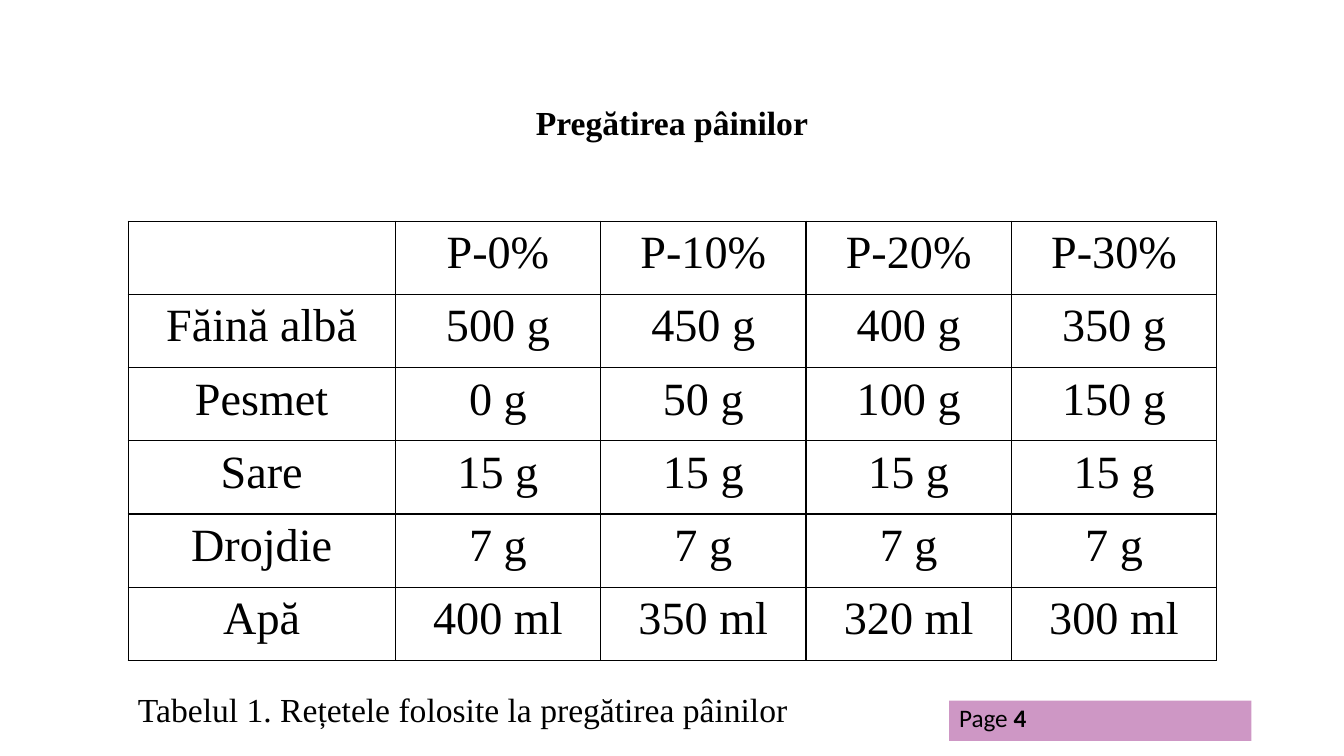
from pptx import Presentation
from pptx.dml.color import RGBColor
from pptx.enum.shapes import MSO_SHAPE
from pptx.enum.text import MSO_ANCHOR, MSO_AUTO_SIZE, PP_ALIGN
from pptx.oxml.ns import qn
from pptx.util import Pt
from lxml import etree

BLACK = RGBColor(0x00, 0x00, 0x00)
PURPLE = RGBColor(0x9F, 0x31, 0x8D)
CENTER, LEFT = PP_ALIGN.CENTER, PP_ALIGN.LEFT
MIDDLE, TOP = MSO_ANCHOR.MIDDLE, MSO_ANCHOR.TOP
RECTANGLE = MSO_SHAPE.RECTANGLE
GROW = MSO_AUTO_SIZE.SHAPE_TO_FIT_TEXT
SERIF, SANS = "Times New Roman", "Calibri"

RECIPES = [
    ["", "P-0%", "P-10%", "P-20%", "P-30%"],
    ["Făină albă", "500 g", "450 g", "400 g", "350 g"],
    ["Pesmet", "0 g", "50 g", "100 g", "150 g"],
    ["Sare", "15 g", "15 g", "15 g", "15 g"],
    ["Drojdie", "7 g", "7 g", "7 g", "7 g"],
    ["Apă", "400 ml", "350 ml", "320 ml", "300 ml"],
]
LABEL_W, VALUE_W, ROW_H = 190.8, 146.7, 52.3


def write(tf, runs, name, size, **para):
    p = tf.paragraphs[0]
    for key, value in para.items():
        setattr(p, key, value)
    for text, bold in runs:
        r = p.add_run()
        r.text = text
        for key, value in {"name": name, "size": Pt(size), "bold": bold}.items():
            setattr(r.font, key, value)
        r.font.color.rgb = BLACK


def add_borders(cell):
    tcPr = cell._tc.get_or_add_tcPr()
    for i, side in enumerate(("a:lnL", "a:lnR", "a:lnT", "a:lnB")):
        ln = etree.Element(qn(side), w=str(Pt(1)))
        fill = etree.SubElement(ln, qn("a:solidFill"))
        etree.SubElement(fill, qn("a:srgbClr"), val=str(BLACK))
        tcPr.insert(i, ln)


prs = Presentation()
prs.slide_width, prs.slide_height = Pt(960), Pt(540)
s = prs.slides.add_slide(prs.slide_layouts[5])

title = s.shapes.title
for key, value in {"left": 66, "top": 44, "width": 828, "height": 89.5}.items():
    setattr(title, key, Pt(value))
title.text_frame.vertical_anchor = MIDDLE
write(title.text_frame, [("Pregătirea pâinilor", True)], SERIF, 24,
      alignment=CENTER, line_spacing=0.9)

sp = s.shapes.add_shape(RECTANGLE, Pt(678), Pt(500.4), Pt(216), Pt(28.8))
sp.shadow.inherit = False
sp.fill.solid()
sp.fill.fore_color.rgb = PURPLE
color = sp.fill._xPr.find(qn("a:solidFill"))[0]
etree.SubElement(color, qn("a:alpha"), val="50000")
sp.line.fill.background()
sp.text_frame.vertical_anchor = TOP
write(sp.text_frame, [("Page ", False), ("4", True)], SANS, 18,
      alignment=LEFT, line_spacing=0.9, space_after=Pt(6))

rows, cols = len(RECIPES), len(RECIPES[0])
table = s.shapes.add_table(rows, cols, Pt(91.5), Pt(158), Pt(LABEL_W + VALUE_W * (cols - 1)),
                           Pt(ROW_H * rows)).table
table.first_row = table.horz_banding = False
for i, col in enumerate(table.columns):
    col.width = Pt(VALUE_W if i else LABEL_W)
for row, texts in zip(table.rows, RECIPES):
    row.height = Pt(ROW_H)
    for cell, text in zip(row.cells, texts):
        margins = {"margin_left": 15, "margin_top": 2, "margin_right": 15, "margin_bottom": 0}
        for key, value in margins.items():
            setattr(cell, key, Pt(value))
        cell.fill.background()
        add_borders(cell)
        if text:
            write(cell.text_frame, [(text, False)], SERIF, 33,
                  alignment=CENTER, line_spacing=1.07, space_after=Pt(8))

caption = s.shapes.add_textbox(Pt(91.5), Pt(486.7), Pt(674.6), Pt(36.7))
tf = caption.text_frame
tf.word_wrap = True
tf.auto_size = GROW
write(tf, [("Tabelul 1. Rețetele folosite la pregătirea pâinilor", False)], SERIF, 24,
      line_spacing=1.07, space_after=Pt(8))

prs.save("out.pptx")
